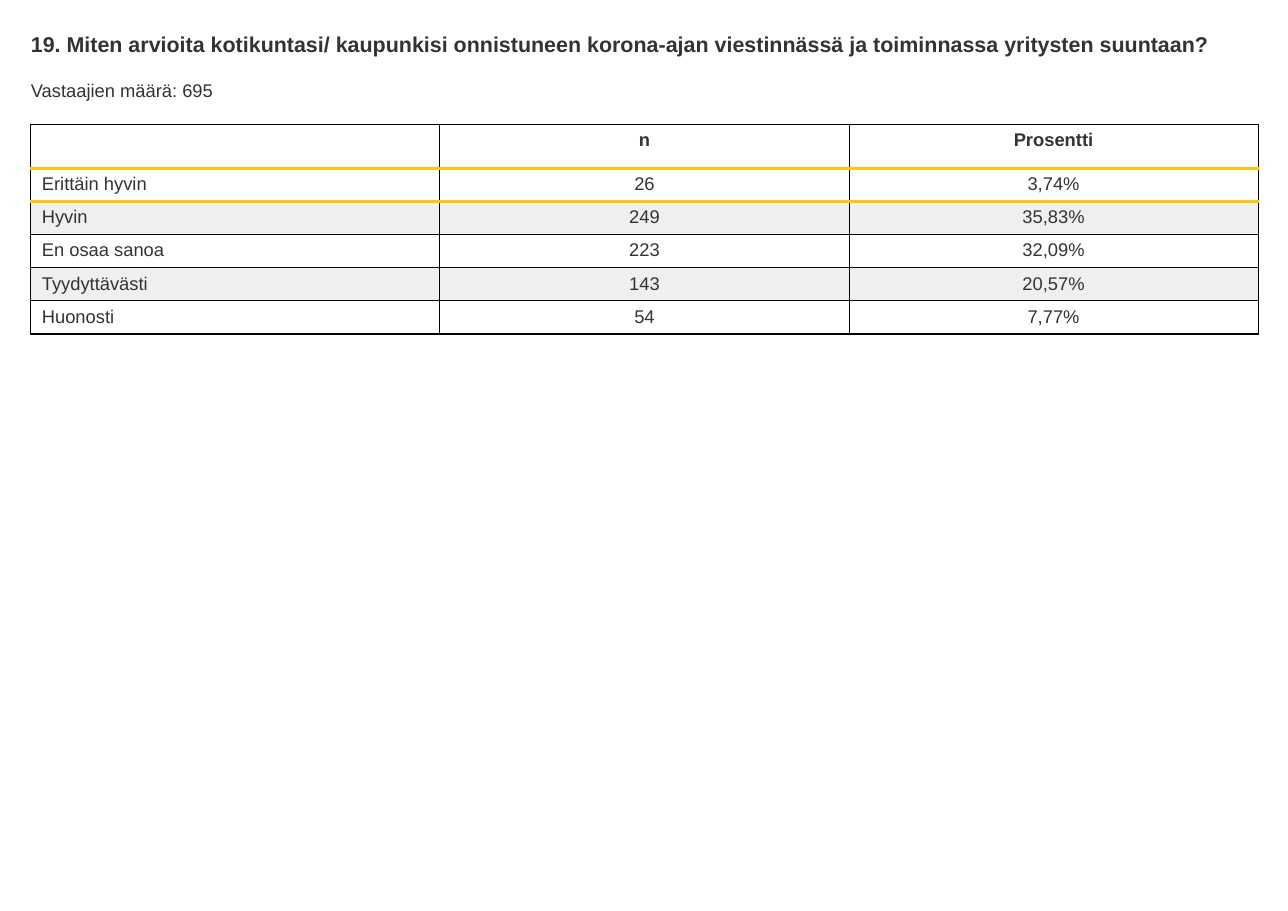
from dataclasses import dataclass

from lxml.etree import SubElement
from pptx import Presentation
from pptx.dml.color import RGBColor
from pptx.enum.text import MSO_ANCHOR, PP_ALIGN
from pptx.oxml.ns import qn
from pptx.util import Inches, Pt

TITLE = ("19. Miten arvioita kotikuntasi/ kaupunkisi onnistuneen korona-ajan "
         "viestinnässä ja toiminnassa yritysten suuntaan?")
RESPONDENTS = "Vastaajien määrä: 695"
ROWS = [
    ("", "n", "Prosentti"),
    ("Erittäin hyvin", "26", "3,74%"),
    ("Hyvin", "249", "35,83%"),
    ("En osaa sanoa", "223", "32,09%"),
    ("Tyydyttävästi", "143", "20,57%"),
    ("Huonosti", "54", "7,77%"),
]


@dataclass(frozen=True)
class Theme:
    font: str = "Arial"
    text: str = "333333"
    line: str = "000000"
    accent: str = "FFC311"
    band: str = "EFEFEF"
    plain: str = "FFFFFF"
    title_size: int = 14
    body_size: int = 12
    thin: float = 0.75
    base: float = 1.5
    thick: float = 2


THEME = Theme()
LEFT, WIDTH = 0.28, 11.15
TABLE_TOP, TABLE_WIDTH, ROW_HEIGHT = 1.13, 11.14, 0.3


def write(tf, text, size, bold=False, align=PP_ALIGN.LEFT):
    p = tf.paragraphs[0]
    p.alignment = align
    r = p.add_run()
    r.text = text
    r.font.name = THEME.font
    r.font.size = Pt(size)
    r.font.bold = bold
    r.font.color.rgb = RGBColor.from_string(THEME.text)


def place_line(shape, top, height, text, size, bold=False):
    shape.left, shape.top = Inches(LEFT), Inches(top)
    shape.width, shape.height = Inches(WIDTH), Inches(height)
    tf = shape.text_frame
    tf.margin_left = tf.margin_right = tf.margin_top = tf.margin_bottom = 0
    tf.vertical_anchor = MSO_ANCHOR.TOP
    tf.word_wrap = True
    write(tf, text, size, bold)


def rule_below(row):
    if row in (0, 1):
        return THEME.accent, THEME.thick
    if row == len(ROWS) - 1:
        return THEME.line, THEME.base
    return THEME.line, THEME.thin


def add_borders(cell, row):
    side = THEME.line, THEME.thin
    borders = {"L": side, "R": side, "T": rule_below(row - 1), "B": rule_below(row)}
    tcPr = cell._tc.get_or_add_tcPr()
    for edge, (color, width) in borders.items():
        ln = SubElement(tcPr, qn(f"a:ln{edge}"), w=str(Pt(width)))
        fill = SubElement(ln, qn("a:solidFill"))
        SubElement(fill, qn("a:srgbClr"), val=color)


def add_results(s):
    table = s.shapes.add_table(
        len(ROWS), len(ROWS[0]), Inches(LEFT), Inches(TABLE_TOP),
        Inches(TABLE_WIDTH), Inches(ROW_HEIGHT * len(ROWS))).table
    table.first_row = table.horz_banding = False
    for i, values in enumerate(ROWS):
        shade = THEME.band if i and i % 2 == 0 else THEME.plain
        for j, value in enumerate(values):
            cell = table.cell(i, j)
            add_borders(cell, i)
            cell.fill.solid()
            cell.fill.fore_color.rgb = RGBColor.from_string(shade)
            align = PP_ALIGN.CENTER if j else PP_ALIGN.LEFT
            write(cell.text_frame, value, THEME.body_size, i == 0, align)


def main():
    prs = Presentation()
    prs.slide_width, prs.slide_height = Inches(11.69), Inches(8.27)
    s = prs.slides.add_slide(prs.slide_layouts[5])
    place_line(s.shapes.title, 0.28, 0.23, TITLE, THEME.title_size, True)
    caption = s.shapes.add_textbox(0, 0, 0, 0)
    place_line(caption, 0.72, 0.2, RESPONDENTS, THEME.body_size)
    add_results(s)
    prs.save("out.pptx")


if __name__ == "__main__":
    main()
